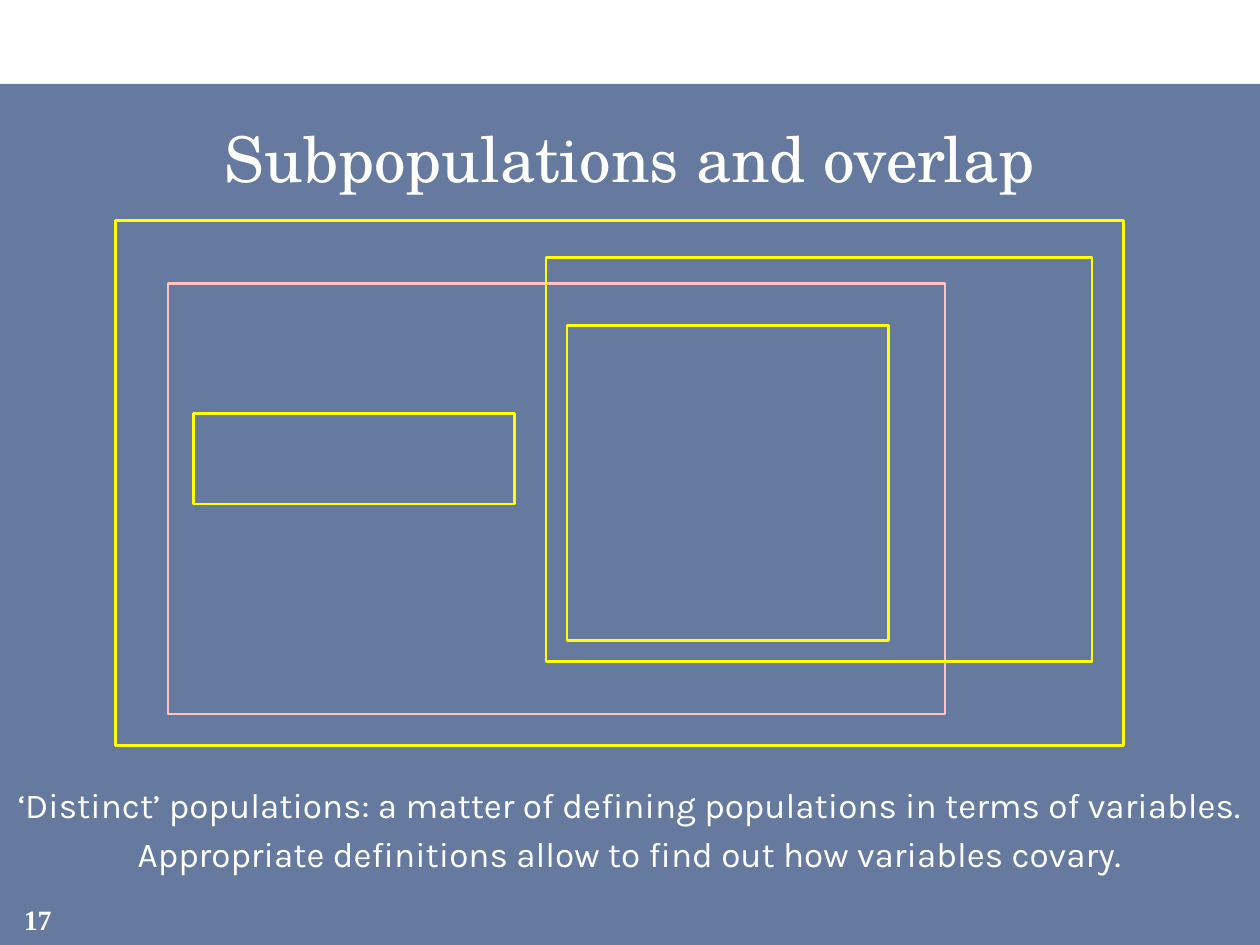
from lxml.etree import SubElement
from pptx import Presentation
from pptx.dml.color import RGBColor as RGB
from pptx.enum.shapes import MSO_SHAPE as SHAPE
from pptx.enum.text import MSO_ANCHOR as ANCHOR, PP_ALIGN as ALIGN
from pptx.oxml.ns import qn
from pptx.util import Pt

PX = 7620  # 120 px to the inch
WIDE, HIGH = 1200, 900

WHITE = RGB(0xFF, 0xFF, 0xFF)
NAVY = RGB(0x00, 0x20, 0x60)
YELLOW = RGB(0xFF, 0xFF, 0x00)
PINK = RGB(0xFF, 0xC1, 0xC1)

HEAD = {"name": "TeX Gyre Schola", "size": Pt(36), "bold": False}
BODY = {"name": "Karla", "size": Pt(20), "bold": False}
PAGE = {"name": "Times New Roman", "size": Pt(16), "bold": True}

NOTES = [
    "‘Distinct’ populations: a matter of defining populations in terms of variables.",
    "Appropriate definitions allow to find out how variables covary.",
]

# Populations: left, top, width, height within the diagram, and colour
GROUPS = [
    (0, 0, 960, 500, YELLOW),
    (50, 60, 740, 410, PINK),
    (410, 35, 520, 385, YELLOW),
    (430, 100, 306, 300, YELLOW),
    (74, 184, 306, 86, YELLOW),
]


def emu(box):
    return [n * PX for n in box]


def write(shape, lines, style, anchor=ANCHOR.MIDDLE, gap=0):
    frame = shape.text_frame
    frame.word_wrap = True
    frame.vertical_anchor = anchor
    for i, line in enumerate(lines):
        para = frame.add_paragraph() if i else frame.paragraphs[0]
        para.text = line
        para.alignment = ALIGN.CENTER
        para.space_before = Pt(gap if i else 0)
        for key, value in style.items():
            setattr(para.font, key, value)
        para.font.color.rgb = WHITE


def add_rect(slide, box):
    rect = slide.shapes.add_shape(SHAPE.RECTANGLE, *emu(box))
    rect.shadow.inherit = False
    return rect


def add_band(slide, box):
    band = add_rect(slide, box)
    band.fill.solid()
    band.fill.fore_color.rgb = NAVY
    band.line.fill.background()
    # Let the white page show through
    tone = next(band.fill._xPr.iter(qn("a:srgbClr")))
    SubElement(tone, qn("a:alpha")).set("val", "60000")


def add_title(slide, box, text):
    title = slide.shapes.title
    title.left, title.top, title.width, title.height = emu(box)
    write(title, [text], HEAD)


def add_groups(slide, box):
    left, top = box[:2]
    for x, y, wide, high, color in GROUPS:
        rect = add_rect(slide, (left + x, top + y, wide, high))
        rect.fill.background()
        rect.line.color.rgb = color
        rect.line.width = Pt(1.5)


def add_text(slide, box, lines, style, **places):
    write(slide.shapes.add_textbox(*emu(box)), lines, style, **places)


def main():
    deck = Presentation()
    deck.slide_width, deck.slide_height = emu((WIDE, HIGH))
    slide = deck.slides.add_slide(deck.slide_layouts[5])

    add_band(slide, (0, 80, WIDE, HIGH - 80))
    add_text(slide, (0, 852, 72, 48), ["17"], PAGE)
    add_title(slide, (30, 100, 1140, 100), "Subpopulations and overlap")
    add_text(slide, (0, 740, WIDE, 150), NOTES, BODY, anchor=ANCHOR.TOP, gap=4)
    add_groups(slide, (110, 210, 960, 500))

    # The title goes above the band
    tree = slide.shapes._spTree
    tree.append(slide.shapes.title._element)
    deck.save("out.pptx")


if __name__ == "__main__":
    main()
